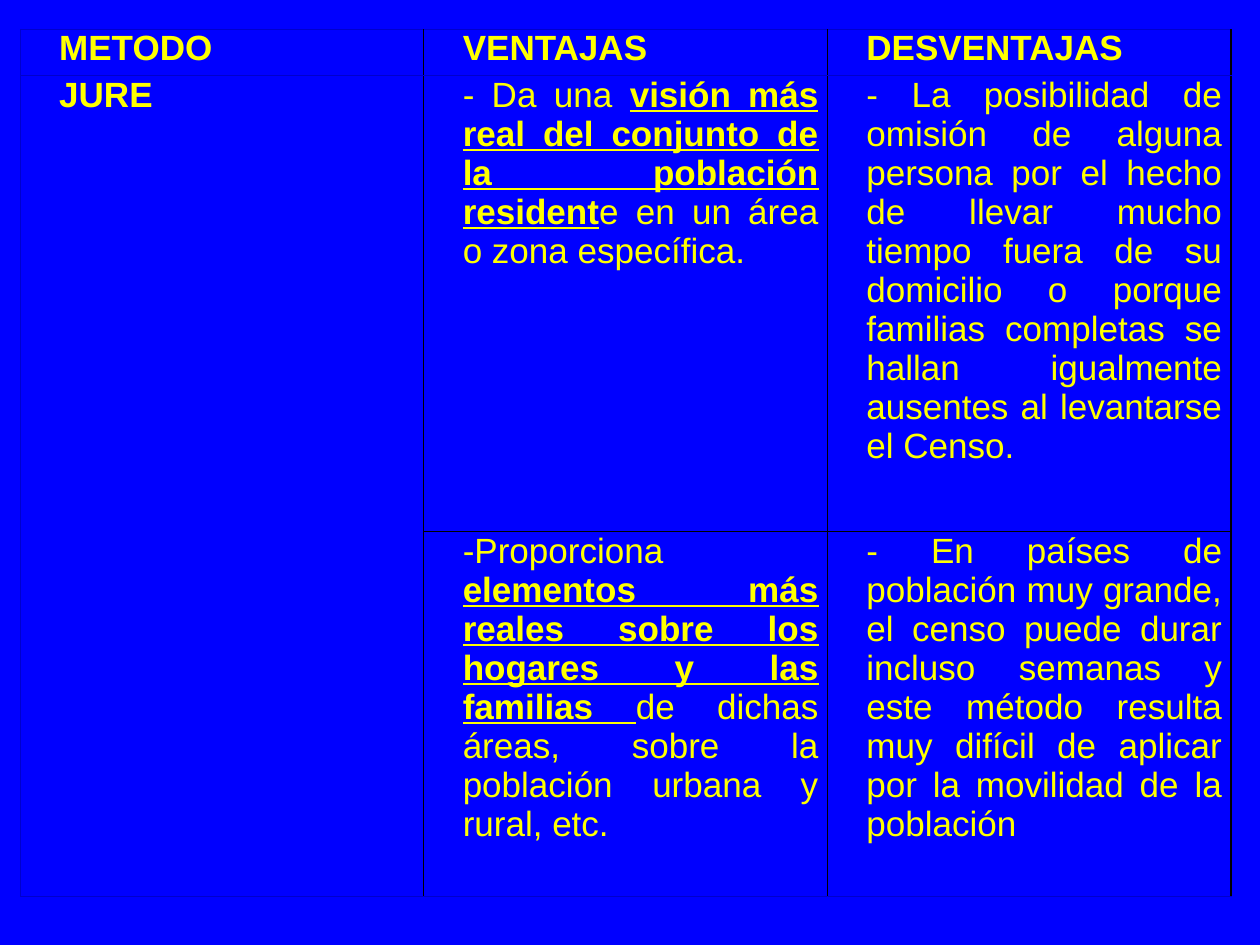
from lxml import etree
from pptx import Presentation
from pptx.dml.color import RGBColor
from pptx.enum.text import PP_ALIGN
from pptx.oxml.ns import qn
from pptx.util import Inches, Pt

BLUE = RGBColor(0x00, 0x00, 0xFF)
YELLOW = RGBColor(0xFF, 0xFF, 0x00)
BLACK = RGBColor(0x00, 0x00, 0x00)
DARK_BLUE = RGBColor(0x00, 0x00, 0xCC)
JUSTIFY = PP_ALIGN.JUSTIFY

SLIDE_W, SLIDE_H = Inches(10), Inches(7.5)
TABLE_BOX = (Inches(0.16), Inches(0.23), Inches(9.61), Inches(6.88))
ROW_HEIGHTS = (0.37, 3.62, 2.89)
STRONG_LINE = (BLACK, Pt(1))
FAINT_LINE = (DARK_BLUE, Pt(0.25))

# Each cell is a list of (text, emphasised) runs; None continues the cell above.
CENSUS_METHOD = [
    [[("METODO", False)], [("VENTAJAS", False)], [("DESVENTAJAS", False)]],
    [
        [("JURE", False)],
        [
            ("- Da una ", False),
            ("visión más real del conjunto de la población resident", True),
            ("e en un área o zona específica.", False),
        ],
        [("- La posibilidad de omisión de alguna persona por el hecho de "
          "llevar mucho tiempo fuera de su domicilio o porque familias "
          "completas se hallan igualmente ausentes al levantarse el Censo.",
          False)],
    ],
    [
        None,
        [
            ("-Proporciona ", False),
            ("elementos más reales sobre los hogares y las familias ", True),
            ("de dichas áreas, sobre la población urbana y rural, etc.", False),
        ],
        [("- En países de población muy grande, el censo puede durar incluso "
          "semanas y este método resulta muy difícil de aplicar por la "
          "movilidad de la población", False)],
    ],
]


def set_border(cell, side, line):
    color, width = line
    border = etree.SubElement(cell._tc.get_or_add_tcPr(), qn(f"a:ln{side}"), w=str(width))
    solid = etree.SubElement(border, qn("a:solidFill"))
    etree.SubElement(solid, qn("a:srgbClr"), val=str(color))


def style_cell(cell, row, col):
    """Draw strong column rules and a strong rule between the two arguments."""
    set_border(cell, "L", STRONG_LINE if col > 0 else FAINT_LINE)
    set_border(cell, "R", STRONG_LINE)
    set_border(cell, "T", STRONG_LINE if row == 2 and col > 0 else FAINT_LINE)
    set_border(cell, "B", STRONG_LINE if row == 1 and col > 0 else FAINT_LINE)
    cell.fill.background()
    cell.margin_left = cell.margin_right = Inches(0.07)
    cell.margin_top = cell.margin_bottom = 0


def write_cell(cell, runs, heading):
    paragraph = cell.text_frame.paragraphs[0]
    paragraph.alignment = JUSTIFY
    indent = paragraph._p.get_or_add_pPr()
    indent.set("marL", str(Inches(0.24)))
    indent.set("indent", "0")
    font = paragraph.font
    font.name, font.size, font.color.rgb = "Arial", Pt(20), YELLOW
    for text, emphasised in runs:
        run = paragraph.add_run()
        run.text = text
        # Table cells take run formatting only, so it is repeated on each run.
        run.font.name, run.font.size = "Arial", Pt(20)
        run.font.color.rgb = YELLOW
        run.font.bold = heading or emphasised
        run.font.underline = emphasised


def add_method_table(slide, box, content):
    left, top, width, height = box
    row_count, col_count = len(content), len(content[0])
    table = slide.shapes.add_table(row_count, col_count, left, top, width, height).table
    table.first_row = table.horz_banding = False
    for column in table.columns:
        column.width = width // col_count
    for table_row, share in zip(table.rows, ROW_HEIGHTS):
        table_row.height = int(height * share / sum(ROW_HEIGHTS))
    table.cell(1, 0).merge(table.cell(2, 0))
    for row, cells in enumerate(content):
        for col, runs in enumerate(cells):
            cell = table.cell(row, col)
            style_cell(cell, row, col)
            if runs:
                write_cell(cell, runs, heading=row == 0 or col == 0)


def main():
    prs = Presentation()
    prs.slide_width, prs.slide_height = SLIDE_W, SLIDE_H
    slide = prs.slides.add_slide(prs.slide_layouts[6])
    slide.background.fill.solid()
    slide.background.fill.fore_color.rgb = BLUE
    add_method_table(slide, TABLE_BOX, CENSUS_METHOD)
    prs.save("out.pptx")


if __name__ == "__main__":
    main()
